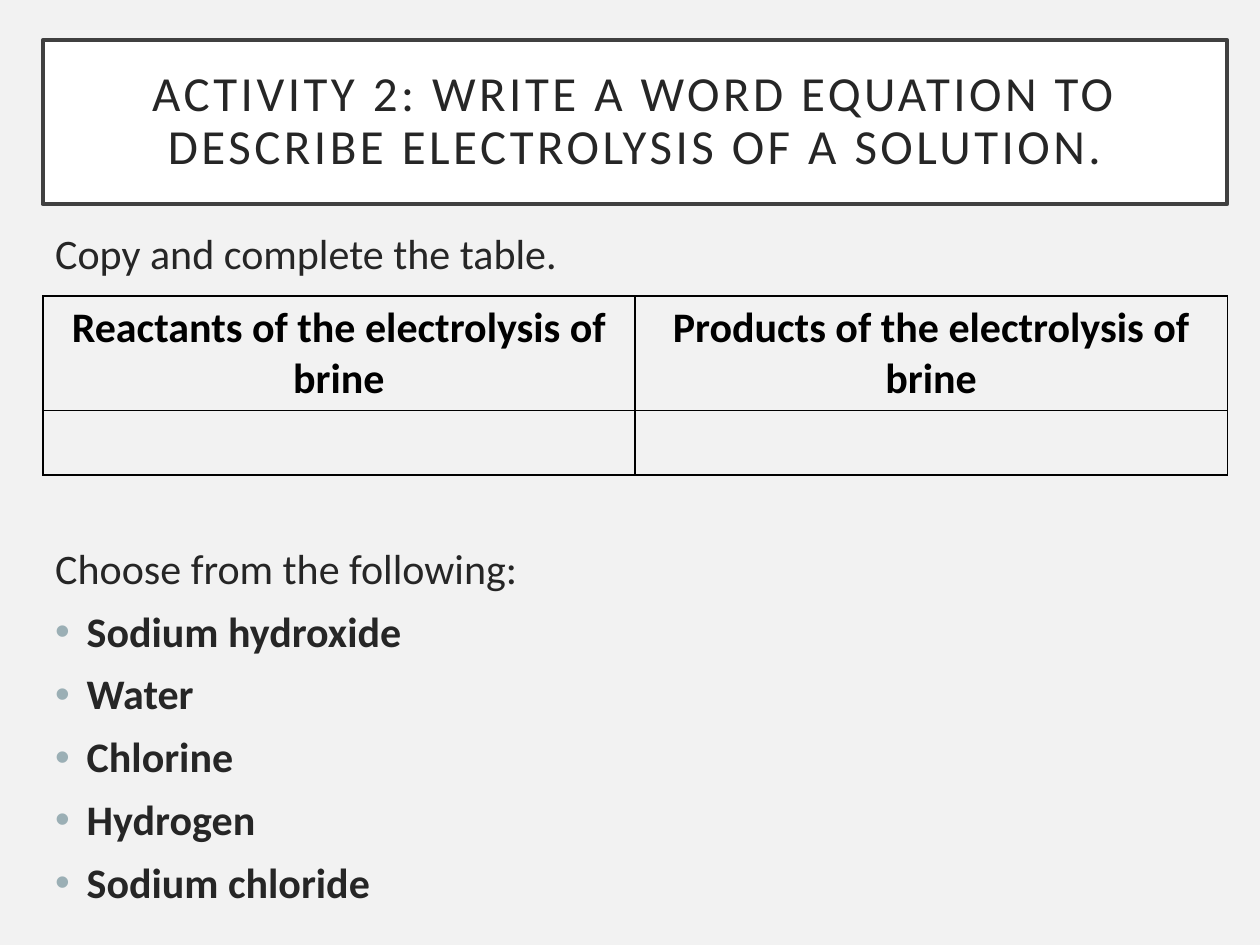
from lxml.etree import SubElement
from pptx import Presentation
from pptx.dml.color import RGBColor
from pptx.enum.shapes import MSO_SHAPE
from pptx.enum.text import MSO_ANCHOR, PP_ALIGN
from pptx.oxml.ns import qn
from pptx.util import Inches, Pt

FONT = "Calibri"
TEXT = "262626"
BLACK = "000000"
BULLET = "9BAFB5"

TITLE = "ACTIVITY 2: WRITE A WORD EQUATION TO DESCRIBE ELECTROLYSIS OF A SOLUTION."
HEADINGS = ["Reactants of the electrolysis of brine", "Products of the electrolysis of brine"]
CHOICES = ["Sodium hydroxide", "Water", "Chlorine", "Hydrogen", "Sodium chloride"]


def color(hex_string):
    return RGBColor.from_string(hex_string)


def add_run(paragraph, text, size=24, bold=False, text_color=TEXT):
    run = paragraph.add_run()
    run.text = text
    run.font.name = FONT
    run.font.size = Pt(size)
    run.font.bold = bold
    run.font.color.rgb = color(text_color)
    return run


def add_bullet(paragraph):
    properties = paragraph._p.get_or_add_pPr()
    properties.set("marL", str(Inches(0.25)))
    properties.set("indent", str(-Inches(0.25)))
    bullet_color = SubElement(properties, qn("a:buClr"))
    SubElement(bullet_color, qn("a:srgbClr"), val=BULLET)
    SubElement(properties, qn("a:buFont"), typeface="Arial")
    SubElement(properties, qn("a:buChar"), char="•")


def add_cell_borders(cell):
    properties = cell._tc.get_or_add_tcPr()
    for position, side in enumerate(("a:lnL", "a:lnR", "a:lnT", "a:lnB")):
        line = properties.makeelement(qn(side), {"w": str(Pt(1))})
        fill = SubElement(line, qn("a:solidFill"))
        SubElement(fill, qn("a:srgbClr"), val=BLACK)
        properties.insert(position, line)


def add_title(slide, left, top, width, height):
    shape = slide.shapes.add_shape(MSO_SHAPE.RECTANGLE, left, top, width, height)
    shape.shadow.inherit = False
    shape.fill.solid()
    shape.fill.fore_color.rgb = color("FFFFFF")
    shape.line.color.rgb = color("404040")
    shape.line.width = Pt(2.5)
    frame = shape.text_frame
    frame.word_wrap = True
    frame.vertical_anchor = MSO_ANCHOR.MIDDLE
    frame.margin_left = frame.margin_right = Inches(0.2)
    frame.margin_top = frame.margin_bottom = Inches(0.2)
    paragraph = frame.paragraphs[0]
    paragraph.alignment = PP_ALIGN.CENTER
    paragraph.line_spacing = 0.9
    run = add_run(paragraph, TITLE, size=28)
    run.font._element.set("spc", "200")


def add_instructions(slide, left, top, width, height):
    """Add both instructions, with room for the table between them, and the choices."""
    frame = slide.shapes.add_textbox(left, top, width, height).text_frame
    frame.word_wrap = True

    def add_line(paragraph, text, space_before=10, bold=False):
        paragraph.line_spacing = 0.9
        paragraph.space_before = Pt(space_before)
        add_run(paragraph, text, bold=bold)

    add_line(frame.paragraphs[0], "Copy and complete the table.")
    add_line(frame.add_paragraph(), "Choose from the following:", space_before=154)
    for choice in CHOICES:
        paragraph = frame.add_paragraph()
        add_line(paragraph, choice, bold=True)
        add_bullet(paragraph)


def add_answer_table(slide, left, top, width, row_heights):
    table = slide.shapes.add_table(
        len(row_heights), len(HEADINGS), left, top, width, sum(row_heights)
    ).table
    table.first_row = table.horz_banding = False
    for row, height in zip(table.rows, row_heights):
        row.height = height
    for cell in table.iter_cells():
        cell.fill.background()
        add_cell_borders(cell)
    for column, heading in enumerate(HEADINGS):
        paragraph = table.cell(0, column).text_frame.paragraphs[0]
        paragraph.alignment = PP_ALIGN.CENTER
        add_run(paragraph, heading, bold=True, text_color=BLACK)


def main():
    presentation = Presentation()
    presentation.slide_width = Inches(10)
    presentation.slide_height = Inches(7.5)
    slide = presentation.slides.add_slide(presentation.slide_layouts[6])
    slide.background.fill.solid()
    slide.background.fill.fore_color.rgb = color("F2F2F2")

    left, width = Inches(0.34), Inches(9.4)
    add_title(slide, left, Inches(0.32), width, Inches(1.3))
    add_instructions(slide, left, Inches(1.8), width, Inches(5.55))
    add_answer_table(slide, left, Inches(2.35), width, [Inches(0.91), Inches(0.51)])
    presentation.save("out.pptx")


if __name__ == "__main__":
    main()
